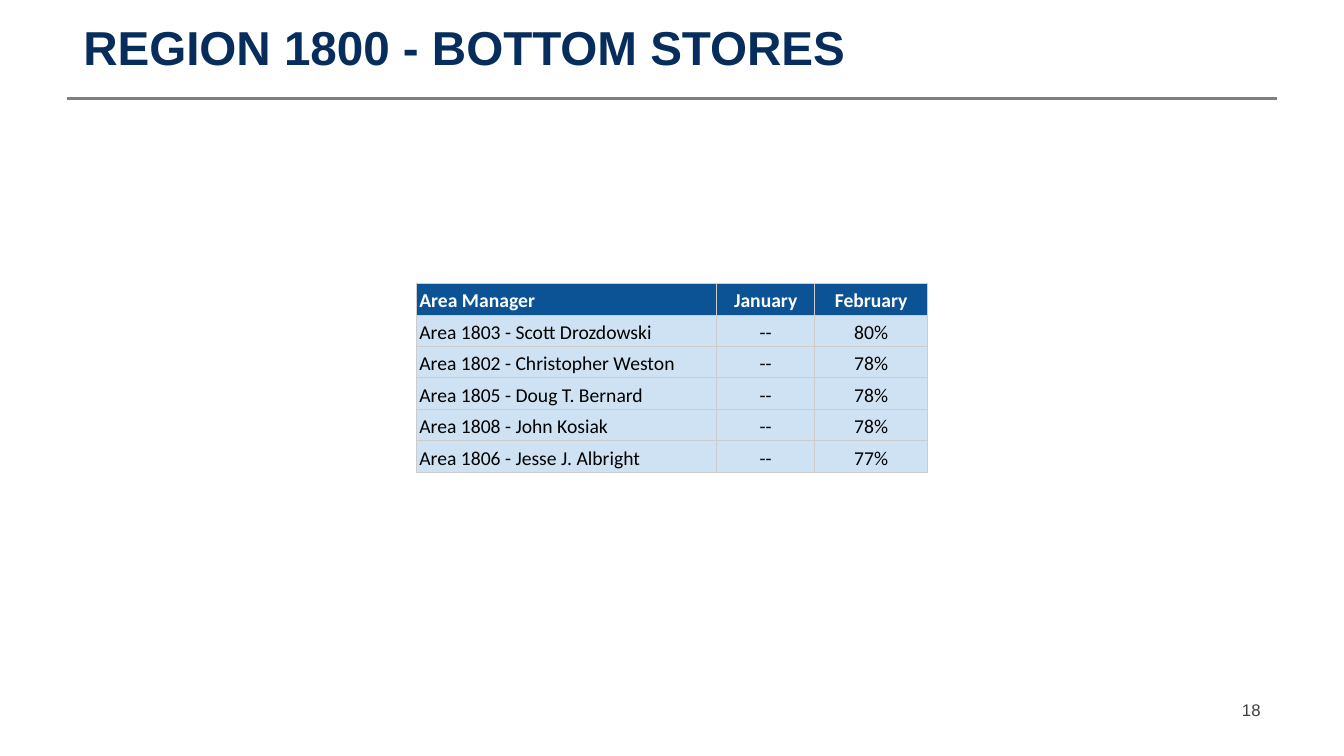
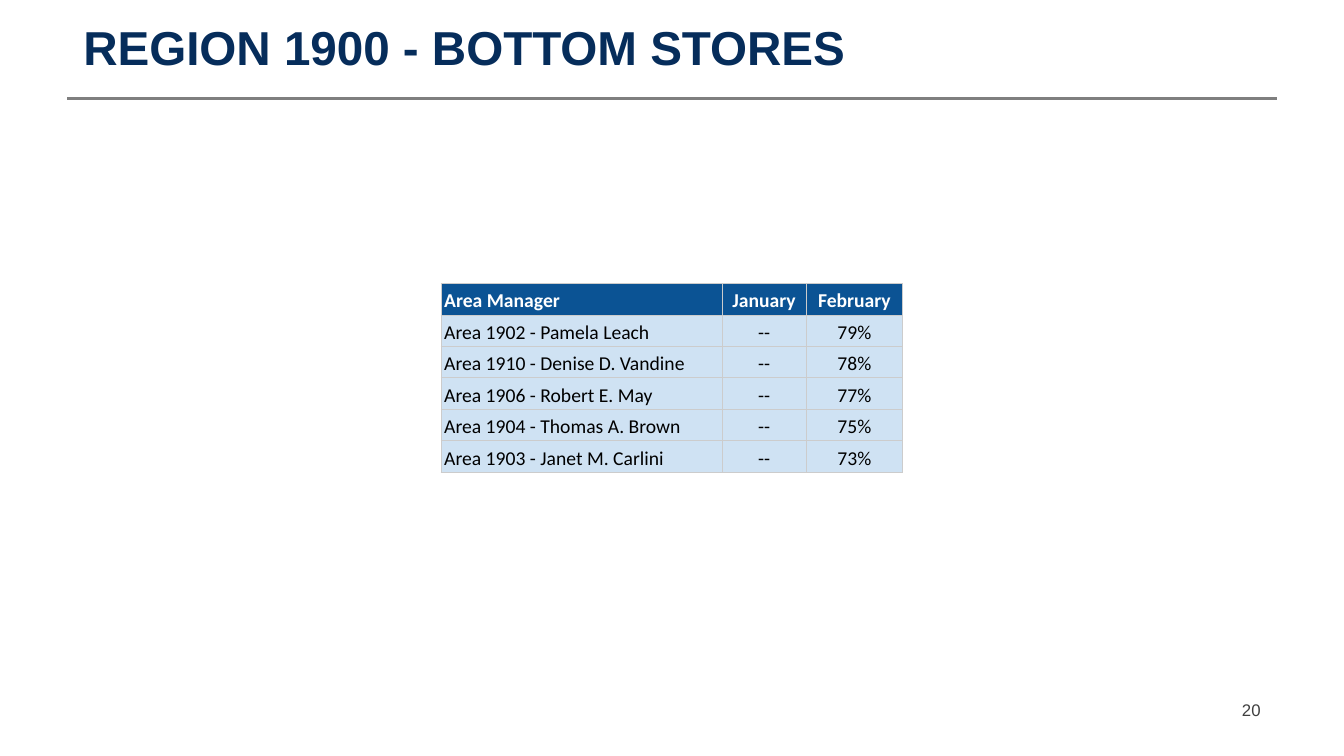
"""Build the slides that list the bottom stores of each region."""

from dataclasses import dataclass
from typing import NamedTuple

from lxml import etree
from pptx import Presentation
from pptx import util as u
from pptx.dml.color import RGBColor
from pptx.enum import shapes, text
from pptx.oxml.ns import qn


@dataclass(frozen=True)
class Theme:
    """Colours, fonts and type sizes of the deck."""

    title: str = "062D5B"
    rule: str = "7F7F7F"
    number: str = "3F3F3F"
    header: str = "0B5394"
    header_text: str = "FFFFFF"
    body: str = "CFE2F3"
    body_text: str = "000000"
    border: str = "CCCCCC"
    text_font: str = "Arial"
    table_font: str = "Calibri"
    title_size: int = 34
    number_size: int = 12
    table_size: int = 14
    rule_width: float = 2
    border_width: float = 0.75


class Box(NamedTuple):
    """A rectangle in columns and rows of the slide grid."""

    left: float
    top: float
    width: float
    height: float


@dataclass(frozen=True)
class Region:
    """One region slide with its table data."""

    name: str
    page: str
    columns: tuple[float, ...]
    areas: tuple[tuple[str, str], ...]


THEME = Theme()
WIDTH, HEIGHT = u.Inches(13.33), u.Inches(7.5)
COLUMNS, ROWS = 20, 24
TITLE_BOX = Box(1, 1, 18, 1.88)
NUMBER_BOX = Box(14.33, 21.9, 4.67, 1.28)
RULE_ROW = 3.14
TABLE_ROW = 9
HEADINGS = ("Area Manager", "January", "February")
REGIONS = (
    Region("1800", "18", (4.47, 1.46, 1.68), (
        ("1803 - Scott Drozdowski", "80%"),
        ("1802 - Christopher Weston", "78%"),
        ("1805 - Doug T. Bernard", "78%"),
        ("1808 - John Kosiak", "78%"),
        ("1806 - Jesse J. Albright", "77%"),
    )),
    Region("1900", "20", (4.18, 1.25, 1.44), (
        ("1902 - Pamela Leach", "79%"),
        ("1910 - Denise D. Vandine", "78%"),
        ("1906 - Robert E. May", "77%"),
        ("1904 - Thomas A. Brown", "75%"),
        ("1903 - Janet M. Carlini", "73%"),
    )),
)


def across(columns: float) -> int:
    """Turn grid columns into a length."""
    return int(WIDTH * columns / COLUMNS)


def down(rows: float) -> int:
    """Turn grid rows into a length."""
    return int(HEIGHT * rows / ROWS)


def place(shape, box: Box) -> None:
    """Move a shape to a grid box."""
    shape.left, shape.top = across(box.left), down(box.top)
    shape.width, shape.height = across(box.width), down(box.height)


def set_margins(target, side: float, end: float) -> None:
    """Set the insets of a text frame or a cell, in inches."""
    target.margin_left = target.margin_right = u.Inches(side)
    target.margin_top = target.margin_bottom = u.Inches(end)


def format_text(paragraph, font: str, size: int, colour: str, bold: bool,
                align: text.PP_ALIGN, spacing: float) -> None:
    """Format a paragraph and its runs."""
    paragraph.alignment = align
    paragraph.line_spacing = spacing
    for run in paragraph.runs:
        run.font.name, run.font.size, run.font.bold = font, u.Pt(size), bold
        run.font.color.rgb = RGBColor.from_string(colour)


def add_title(slide, wording: str) -> None:
    """Fill and format the title placeholder."""
    title = slide.shapes.title
    place(title, TITLE_BOX)
    frame = title.text_frame
    frame.text = wording
    frame.word_wrap = True
    frame.auto_size = text.MSO_AUTO_SIZE.NONE
    frame.vertical_anchor = text.MSO_ANCHOR.BOTTOM
    set_margins(frame, 0.16, 0.16)
    format_text(frame.paragraphs[0], THEME.text_font, THEME.title_size,
                THEME.title, True, text.PP_ALIGN.LEFT, 0.8)


def add_rule(slide) -> None:
    """Draw the line under the title."""
    rule = slide.shapes.add_connector(
        shapes.MSO_CONNECTOR.STRAIGHT, across(1), down(RULE_ROW),
        across(COLUMNS - 1), down(RULE_ROW))
    rule.line.color.rgb = RGBColor.from_string(THEME.rule)
    rule.line.width = u.Pt(THEME.rule_width)
    etree.SubElement(rule._element.spPr, qn("a:effectLst"))


def add_number(slide, page: str) -> None:
    """Write the page number at the bottom right."""
    number = slide.shapes.add_textbox(0, 0, 0, 0)
    place(number, NUMBER_BOX)
    frame = number.text_frame
    frame.text = page
    frame.word_wrap = True
    frame.vertical_anchor = text.MSO_ANCHOR.MIDDLE
    set_margins(frame, 0.16, 0.08)
    format_text(frame.paragraphs[0], THEME.text_font, THEME.number_size,
                THEME.number, False, text.PP_ALIGN.RIGHT, 1.0)


def add_borders(cell) -> None:
    """Draw the four borders of a cell."""
    properties = cell._tc.get_or_add_tcPr()
    for index, side in enumerate(("a:lnL", "a:lnR", "a:lnT", "a:lnB")):
        line = etree.Element(qn(side), w=str(u.Pt(THEME.border_width)))
        fill = etree.SubElement(line, qn("a:solidFill"))
        etree.SubElement(fill, qn("a:srgbClr"), val=THEME.border)
        properties.insert(index, line)


def fill_cell(cell, wording: str, is_header: bool, is_first: bool) -> None:
    """Write and format one table cell."""
    cell.text_frame.text = wording
    cell.vertical_anchor = text.MSO_ANCHOR.BOTTOM
    set_margins(cell, 0.03, 0.02)
    cell.fill.solid()
    cell.fill.fore_color.rgb = RGBColor.from_string(
        THEME.header if is_header else THEME.body)
    format_text(cell.text_frame.paragraphs[0], THEME.table_font,
                THEME.table_size,
                THEME.header_text if is_header else THEME.body_text, is_header,
                text.PP_ALIGN.LEFT if is_first else text.PP_ALIGN.CENTER, 1.15)
    add_borders(cell)


def add_area_table(slide, region: Region) -> None:
    """Add the centred table of area managers."""
    records = [HEADINGS] + [(f"Area {area}", "--", share)
                            for area, share in region.areas]
    width = sum(region.columns)
    table = slide.shapes.add_table(
        len(records), len(HEADINGS), across((COLUMNS - width) / 2),
        down(TABLE_ROW), across(width), down(len(records))).table
    table.first_row = table.horz_banding = False
    for column, columns in zip(table.columns, region.columns):
        column.width = across(columns)
    for row_index, record in enumerate(records):
        table.rows[row_index].height = down(1)
        for column_index, wording in enumerate(record):
            fill_cell(table.cell(row_index, column_index), wording,
                      row_index == 0, column_index == 0)


def add_region_slide(presentation, region: Region) -> None:
    """Add one region slide."""
    layout = presentation.slide_layouts.get_by_name("Title Only")
    slide = presentation.slides.add_slide(layout)
    add_rule(slide)
    add_title(slide, f"REGION {region.name} - BOTTOM STORES")
    add_number(slide, region.page)
    add_area_table(slide, region)


def main() -> None:
    """Build and save the presentation."""
    presentation = Presentation()
    presentation.slide_width, presentation.slide_height = WIDTH, HEIGHT
    for region in REGIONS:
        add_region_slide(presentation, region)
    presentation.save("out.pptx")


if __name__ == "__main__":
    main()
